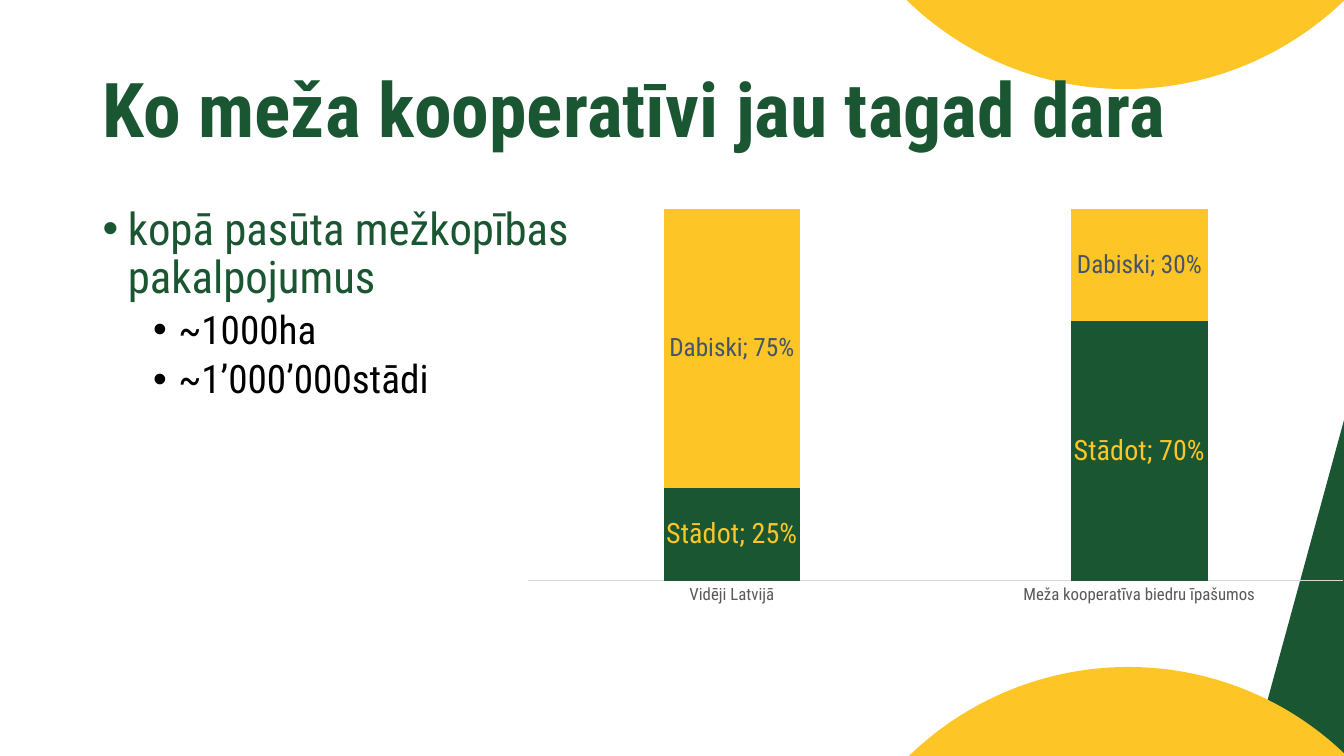
from lxml import etree
from pptx import Presentation
from pptx.chart.data import CategoryChartData
from pptx.dml.color import RGBColor
from pptx.enum.chart import XL_CHART_TYPE, XL_LABEL_POSITION, XL_TICK_MARK
from pptx.enum.shapes import MSO_SHAPE
from pptx.enum.text import MSO_ANCHOR, MSO_AUTO_SIZE, PP_ALIGN
from pptx.oxml import parse_xml
from pptx.oxml.ns import nsdecls, qn
from pptx.util import Inches, Pt

GREEN = RGBColor(0x1A, 0x56, 0x32)
YELLOW = RGBColor(0xFE, 0xC5, 0x26)
BLACK = RGBColor(0x00, 0x00, 0x00)
SLATE = RGBColor(0x44, 0x54, 0x6A)
GREY = RGBColor(0x59, 0x59, 0x59)
LIGHT_GREY = RGBColor(0xD9, 0xD9, 0xD9)


class SlideBuilder:
    font = "Roboto Condensed"

    def __init__(self, prs):
        self.s = prs.slides.add_slide(prs.slide_layouts[5])

    def style(self, font, size, color, bold=False):
        font.name, font.size, font.bold = self.font, Pt(size), bold
        font.color.rgb = color

    def shape(self, kind, box, fill, adjustments, rotation=0):
        sp = self.s.shapes.add_shape(kind, *map(Inches, box))
        sp.shadow.inherit = False
        sp.fill.solid()
        sp.fill.fore_color.rgb = fill
        sp.line.fill.background()
        sp.rotation = rotation
        for i, value in enumerate(adjustments):
            sp.adjustments[i] = value

    def title(self, text, box):
        sp = self.s.shapes.title
        sp.left, sp.top, sp.width, sp.height = map(Inches, box)
        tf = sp.text_frame
        tf.text = text
        tf.auto_size = MSO_AUTO_SIZE.NONE
        tf.vertical_anchor = MSO_ANCHOR.MIDDLE
        p = tf.paragraphs[0]
        p.alignment, p.line_spacing = PP_ALIGN.LEFT, 0.9
        self.style(p.runs[0].font, 54, GREEN, bold=True)
        # Bring the title in front of the decoration
        self.s.shapes.element.append(sp.element)

    def bullets(self, items, box):
        tf = self.s.shapes.add_textbox(*map(Inches, box)).text_frame
        tf.word_wrap = True
        for i, (text, level) in enumerate(items):
            p = tf.paragraphs[0] if i == 0 else tf.add_paragraph()
            p.text = text
            p.level, p.line_spacing = level, 0.9
            p.space_before = Pt(5 if level else 10)
            self.style(p.runs[0].font, 28 if level else 32, BLACK if level else GREEN)
            pPr = p._p.get_or_add_pPr()
            pPr.set("marL", str(Inches(0.25 + 0.5 * level)))
            pPr.set("indent", str(Inches(-0.25)))
            etree.SubElement(pPr, qn("a:buFont")).set("typeface", "Arial")
            etree.SubElement(pPr, qn("a:buChar")).set("char", "•")

    def stacked_chart(self, categories, series, box):
        data = CategoryChartData(number_format="0%")
        data.categories = categories
        for name, values, *_ in series:
            data.add_series(name, values)
        chart = self.s.shapes.add_chart(
            XL_CHART_TYPE.COLUMN_STACKED_100, *map(Inches, box), data).chart
        chart.has_legend = chart.has_title = False
        self.style(chart.font, 10, BLACK)

        # Axes
        axis = chart.category_axis
        axis.major_tick_mark = axis.minor_tick_mark = XL_TICK_MARK.NONE
        axis.format.line.color.rgb = LIGHT_GREY
        axis.format.line.width = Pt(0.75)
        self.style(axis.tick_labels.font, 12, GREY)
        chart.value_axis.has_major_gridlines = False
        chart.value_axis.visible = False

        # Columns and their labels
        plot = chart.plots[0]
        plot.gap_width, plot.overlap = 198, 100
        for ser, (_, _, fill, size, color) in zip(plot.series, series):
            ser.format.fill.solid()
            ser.format.fill.fore_color.rgb = fill
            labels = ser.data_labels
            labels.show_value = labels.show_series_name = True
            labels.number_format, labels.number_format_is_linked = "0%", False
            labels.position = XL_LABEL_POSITION.CENTER
            self.style(labels.font, size, color)
            separator = parse_xml(f'<c:separator {nsdecls("c")}>; </c:separator>')
            labels._element.find(qn("c:showBubbleSize")).addnext(separator)

        # Plot area placement as fractions of the chart
        area = chart._chartSpace.chart.plotArea
        for old in area.findall(qn("c:layout")):
            area.remove(old)
        layout = etree.Element(qn("c:layout"))
        manual = etree.SubElement(layout, qn("c:manualLayout"))
        for tag, value in (("layoutTarget", "inner"), ("xMode", "edge"),
                           ("yMode", "edge"), ("x", "0.02"), ("y", "0.018"),
                           ("w", "0.96"), ("h", "0.902")):
            etree.SubElement(manual, qn(f"c:{tag}")).set("val", value)
        area.insert(0, layout)


def main():
    prs = Presentation()
    prs.slide_width, prs.slide_height = Inches(13.33), Inches(7.5)
    b = SlideBuilder(prs)

    # Decoration
    b.shape(MSO_SHAPE.ISOSCELES_TRIANGLE, (12.42, 4.13, 0.92, 3.37), GREEN, [1])
    for top, rotation in ((6.61, 44.6), (-5.35, 224.5)):
        b.shape(MSO_SHAPE.CHORD, (8.07, top, 6.21, 6.24), YELLOW,
                [108.58, 162], rotation)

    # Text
    b.title("Ko meža kooperatīvi jau tagad dara", (0.92, 0.4, 11.5, 1.45))
    b.bullets([("kopā pasūta mežkopības pakalpojumus", 0),
               ("~1000ha", 1),
               ("~1’000’000stādi", 1)], (0.92, 2, 5.67, 4.76))

    # Planted and natural regeneration shares
    b.stacked_chart(["Vidēji Latvijā", "Meža kooperatīva biedru īpašumos"],
                    [("Stādot", (0.25, 0.7), GREEN, 20, YELLOW),
                     ("Dabiski", (0.75, 0.3), YELLOW, 18, SLATE)],
                    (5.07, 2, 8.42, 4.09))
    prs.save("out.pptx")


if __name__ == "__main__":
    main()
